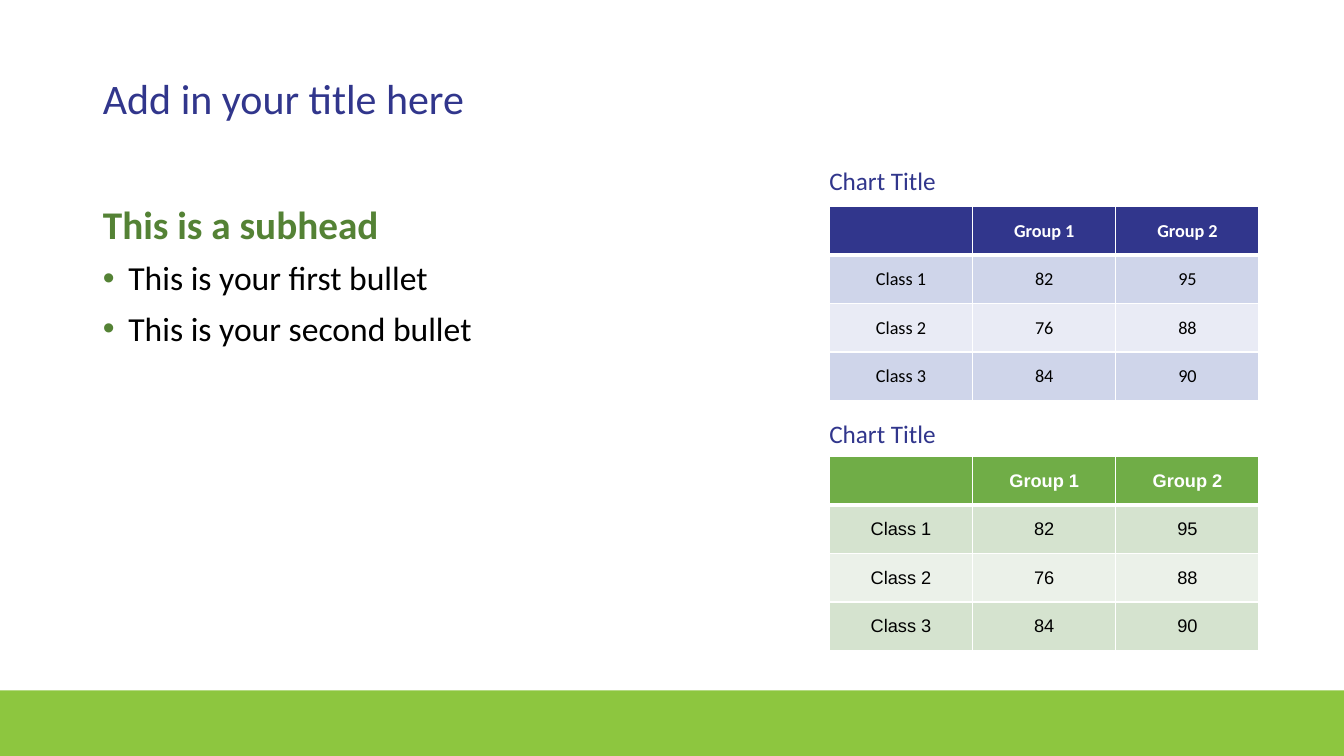
from pptx import Presentation
from pptx.dml.color import RGBColor
from pptx.enum.shapes import MSO_SHAPE as Shape
from pptx.enum.text import MSO_ANCHOR as Anchor, MSO_AUTO_SIZE as AutoSize, PP_ALIGN as Align
from pptx.oxml.ns import qn
from pptx.util import Cm, Pt
from lxml.etree import SubElement

INDIGO = "31368C"
LEAF = "548235"
WHITE = "FFFFFF"
BLACK = "000000"
SCORES = [
    ["", "Group 1", "Group 2"],
    ["Class 1", "82", "95"],
    ["Class 2", "76", "88"],
    ["Class 3", "84", "90"],
]
COLUMN_WIDTH, ROW_HEIGHT = 3.61, 1.22
CELL_FORMAT = {
    "vertical_anchor": Anchor.MIDDLE,
    "margin_left": Cm(0.2),
    "margin_right": Cm(0.2),
    "margin_top": Cm(0.1),
    "margin_bottom": Cm(0.1),
}


def color(hex_value):
    return RGBColor.from_string(hex_value)


def apply(target, formats):
    for attribute, value in formats.items():
        setattr(target, attribute, value)


def style_font(paragraph, size, hex_value, bold=False, name="Calibri"):
    apply(paragraph.font, {"size": Pt(size), "bold": bold, "name": name})
    paragraph.font.color.rgb = color(hex_value)


def place(shape, left, top, width, height):
    apply(shape, {"left": Cm(left), "top": Cm(top), "width": Cm(width), "height": Cm(height)})


def set_bullet(paragraph, symbol=None, hex_value=LEAF):
    properties = paragraph._p.get_or_add_pPr()
    indent = Cm(0.64) if symbol else 0
    properties.set("marL", str(indent))
    properties.set("indent", str(-indent))
    if symbol:
        tint = SubElement(properties, qn("a:buClr"))
        SubElement(tint, qn("a:srgbClr"), val=hex_value)
        SubElement(properties, qn("a:buFont"), typeface="Arial")
        SubElement(properties, qn("a:buChar"), char=symbol)
    else:
        SubElement(properties, qn("a:buNone"))


def add_footer_band(slide):
    band = slide.shapes.add_shape(Shape.RECTANGLE, 0, Cm(17.4), Cm(33.87), Cm(1.65))
    band.shadow.inherit = False
    band.fill.solid()
    band.fill.fore_color.rgb = color("8DC63F")
    band.line.fill.background()


def fill_title(title, text):
    place(title, 2.34, 1.02, 22.12, 2.87)
    title.text = text
    apply(title.text_frame, {"vertical_anchor": Anchor.MIDDLE, "auto_size": AutoSize.NONE})
    heading = title.text_frame.paragraphs[0]
    heading.alignment = Align.LEFT
    style_font(heading, 30, INDIGO)


def fill_body(body, subhead, bullets):
    place(body, 2.34, 5.05, 18.03, 12.12)
    frame = body.text_frame
    frame.text = "\n".join([subhead, *bullets])
    frame.auto_size = AutoSize.NONE
    for index, paragraph in enumerate(frame.paragraphs):
        apply(paragraph, {"line_spacing": 0.9, "space_before": Pt(10 if index else 0)})
        set_bullet(paragraph, "•" if index else None)
        if index:
            style_font(paragraph, 24, BLACK)
        else:
            style_font(paragraph, 28, LEAF, bold=True)


def add_caption(slide, text, top):
    caption = slide.shapes.add_textbox(Cm(20.65), Cm(top), Cm(10.85), Cm(1.02))
    frame = caption.text_frame
    apply(frame, {"word_wrap": True, "auto_size": AutoSize.SHAPE_TO_FIT_TEXT, "text": text})
    style_font(frame.paragraphs[0], 18, INDIGO)


def set_borders(cell, widths):
    properties = cell._tc.get_or_add_tcPr()
    for side, width in widths.items():
        edge = SubElement(properties, qn(f"a:ln{side}"), w=str(Pt(width)))
        stroke = SubElement(edge, qn("a:solidFill"))
        SubElement(stroke, qn("a:srgbClr"), val=WHITE)


def add_score_table(slide, top, header_fill, band_fills, font_name):
    rows, columns = len(SCORES), len(SCORES[0])
    table = slide.shapes.add_table(
        rows, columns, Cm(20.9), Cm(top), Cm(COLUMN_WIDTH * columns), Cm(ROW_HEIGHT * rows)
    ).table
    table.horz_banding = False
    for column in table.columns:
        column.width = Cm(COLUMN_WIDTH)
    for row_index, values in enumerate(SCORES):
        is_header = row_index == 0
        table.rows[row_index].height = Cm(ROW_HEIGHT)
        for column_index, value in enumerate(values):
            cell = table.cell(row_index, column_index)
            set_borders(cell, {"L": 1, "R": 1, "T": 3 if row_index == 1 else 1, "B": 3 if is_header else 1})
            cell.fill.solid()
            cell.fill.fore_color.rgb = color(header_fill if is_header else band_fills[(row_index - 1) % 2])
            apply(cell, CELL_FORMAT)
            cell.text = value
            label = cell.text_frame.paragraphs[0]
            label.alignment = Align.CENTER
            style_font(label, 13, WHITE if is_header else BLACK, is_header, font_name)


def main():
    deck = Presentation()
    apply(deck, {"slide_width": Cm(33.87), "slide_height": Cm(19.05)})
    slide = deck.slides.add_slide(deck.slide_layouts[1])
    add_footer_band(slide)
    fill_title(slide.shapes.title, "Add in your title here")
    fill_body(
        slide.placeholders[1],
        "This is a subhead",
        ["This is your first bullet", "This is your second bullet"],
    )
    add_score_table(slide, 5.21, INDIGO, ["CFD5EA", "E9EBF5"], "Calibri")
    add_score_table(slide, 11.51, "70AD47", ["D5E3CF", "EBF1E9"], "Arial")
    for top in (4.04, 10.41):
        add_caption(slide, "Chart Title", top)
    deck.save("out.pptx")


if __name__ == "__main__":
    main()
